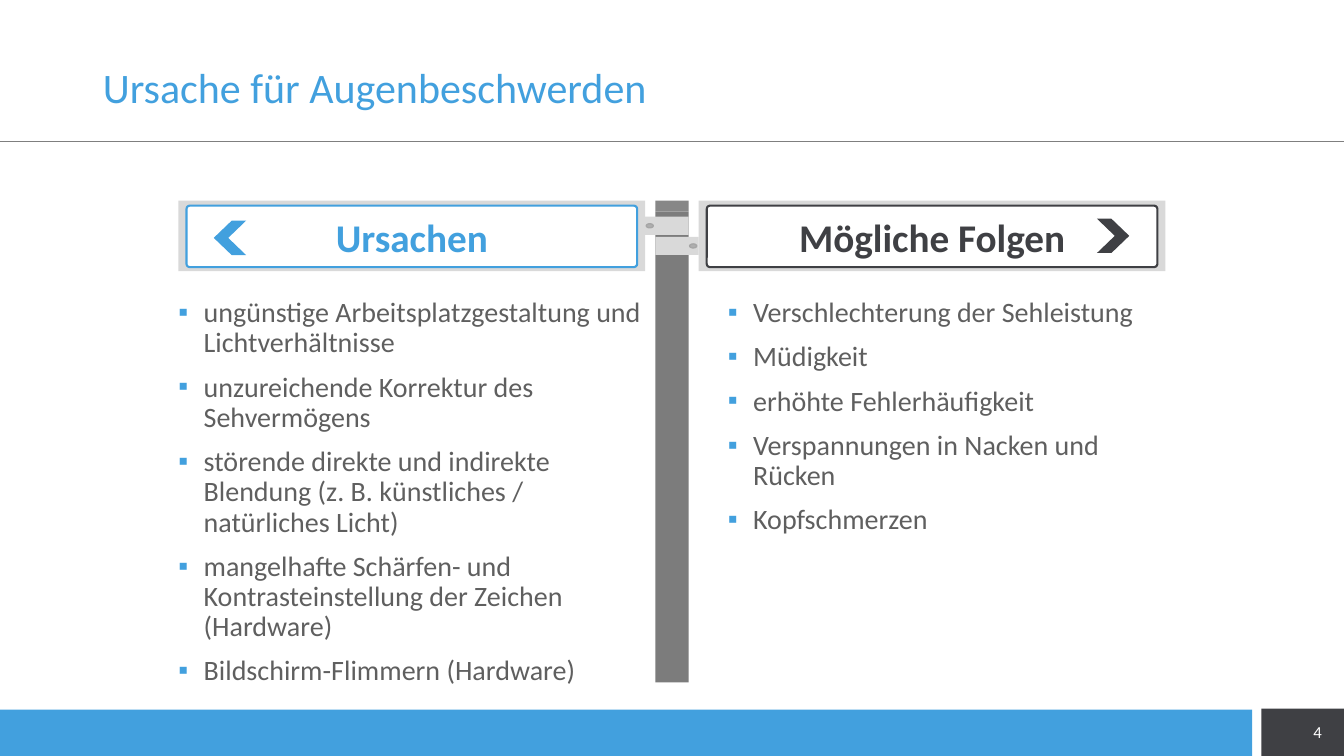
from dataclasses import dataclass

from lxml import etree
from pptx import Presentation
from pptx.dml.color import RGBColor
from pptx.enum.shapes import MSO_CONNECTOR, MSO_SHAPE
from pptx.enum.text import MSO_ANCHOR, MSO_AUTO_SIZE, PP_ALIGN
from pptx.oxml.ns import qn
from pptx.util import Inches, Pt

RECT, ROUNDED = MSO_SHAPE.RECTANGLE, MSO_SHAPE.ROUNDED_RECTANGLE
OVAL, CHEVRON = MSO_SHAPE.OVAL, MSO_SHAPE.CHEVRON
STRAIGHT = MSO_CONNECTOR.STRAIGHT
MIDDLE, TOP = MSO_ANCHOR.MIDDLE, MSO_ANCHOR.TOP
LEFT, CENTER, RIGHT = PP_ALIGN.LEFT, PP_ALIGN.CENTER, PP_ALIGN.RIGHT
NO_AUTOFIT = MSO_AUTO_SIZE.NONE


@dataclass(frozen=True)
class Theme:
    font: str = "Calibri"
    blue: str = "42A0DE"
    dark: str = "3F4044"
    text: str = "5F5F5F"
    white: str = "FFFFFF"
    rule: str = "7F7F7F"
    post: str = "7C7C7C"
    post_cap: str = "878787"
    panel: str = "D9D9D9"
    rivet: str = "AFAFAF"
    rivet_edge: str = "A6A6A6"
    title_size: int = 30
    sign_size: int = 28
    list_size: int = 20
    number_size: int = 12


@dataclass(frozen=True)
class Box:
    left: float
    top: float
    width: float
    height: float

    def lengths(self) -> tuple:
        return tuple(Inches(v) for v in (self.left, self.top, self.width, self.height))


@dataclass(frozen=True)
class Sign:
    heading: str
    color: str
    panel_left: float
    arrow_left: float
    arrow_turn: int
    bracket_left: float
    bracket_top: float
    list_box: Box
    points: tuple


THEME = Theme()
SIGNS = (
    Sign("Ursachen", THEME.blue, 1.77, 2.12, 180, 6.4, 2.15, Box(1.77, 2.91, 4.62, 3.63), (
        "ungünstige Arbeitsplatzgestaltung und Lichtverhältnisse",
        "unzureichende Korrektur des Sehvermögens",
        "störende direkte und indirekte Blendung (z. B. künstliches / natürliches Licht)",
        "mangelhafte Schärfen- und Kontrasteinstellung der Zeichen (Hardware)",
        "Bildschirm-Flimmern (Hardware)",
    )),
    Sign("Mögliche Folgen", THEME.dark, 6.93, 10.88, 0, 6.5, 2.35, Box(7.22, 2.91, 4.55, 3.61), (
        "Verschlechterung der Sehleistung",
        "Müdigkeit",
        "erhöhte Fehlerhäufigkeit",
        "Verspannungen in Nacken und Rücken",
        "Kopfschmerzen",
    )),
)


def place(target, box: Box) -> None:
    target.left, target.top, target.width, target.height = box.lengths()


def add_block(slide, kind, box: Box, fill: str, edge: str = "", edge_width: float = 0):
    block = slide.shapes.add_shape(kind, *box.lengths())
    block.shadow.inherit = False
    block.fill.solid()
    block.fill.fore_color.rgb = RGBColor.from_string(fill)
    if edge:
        block.line.color.rgb = RGBColor.from_string(edge)
        block.line.width = Pt(edge_width)
    else:
        block.line.fill.background()
    return block


def set_frame(frame, anchor, side_inset: float) -> None:
    frame.word_wrap = True
    frame.auto_size = NO_AUTOFIT
    frame.vertical_anchor = anchor
    frame.margin_left = frame.margin_right = Inches(side_inset)
    frame.margin_top = frame.margin_bottom = Inches(0.05)


def add_text(paragraph, text: str, size: int, color: str, align, bold: bool = False) -> None:
    paragraph.alignment = align
    run = paragraph.add_run()
    run.text = text
    run.font.name = THEME.font
    run.font.size = Pt(size)
    run.font.bold = bold
    run.font.color.rgb = RGBColor.from_string(color)


def add_bullet(paragraph) -> None:
    paragraph.line_spacing = 0.9
    paragraph.space_before = Pt(10)
    properties = paragraph._p.get_or_add_pPr()
    properties.set("marL", str(Inches(0.25)))
    properties.set("indent", str(-Inches(0.25)))
    bullet_color = etree.SubElement(properties, qn("a:buClr"))
    etree.SubElement(bullet_color, qn("a:srgbClr"), val=THEME.blue)
    etree.SubElement(properties, qn("a:buChar"), char="▪")


def draw_base(slide) -> None:
    add_block(slide, RECT, Box(12.51, 7.03, 0.82, 0.47), THEME.dark)
    add_block(slide, RECT, Box(0, 7.04, 12.42, 0.46), THEME.blue)
    rule = slide.shapes.add_connector(STRAIGHT, 0, Inches(1.4), Inches(13.33), Inches(1.4))
    rule.line.color.rgb = RGBColor.from_string(THEME.rule)
    rule.line.width = Pt(0.5)
    etree.SubElement(rule._element.spPr, qn("a:effectLst"))
    page_number = slide.shapes.add_textbox(*Box(12.64, 7.06, 0.57, 0.4).lengths())
    set_frame(page_number.text_frame, MIDDLE, 0.1)
    add_text(page_number.text_frame.paragraphs[0], "4", THEME.number_size, THEME.white, RIGHT)


def fill_title(title) -> None:
    place(title, Box(0.92, 0.4, 11.5, 0.98))
    set_frame(title.text_frame, MIDDLE, 0.1)
    heading = title.text_frame.paragraphs[0]
    heading.line_spacing = 0.9
    add_text(heading, "Ursache für Augenbeschwerden", THEME.title_size, THEME.blue, LEFT)


def draw_post(slide) -> None:
    add_block(slide, RECT, Box(6.5, 2.1, 0.33, 4.67), THEME.post)
    add_block(slide, RECT, Box(6.5, 1.99, 0.33, 0.11), THEME.post_cap)


def draw_sign(slide, sign: Sign) -> None:
    add_block(slide, RECT, Box(sign.panel_left, 1.99, 4.63, 0.7), THEME.panel)
    board_box = Box(sign.panel_left + 0.08, 2.04, 4.47, 0.61)
    board = add_block(slide, ROUNDED, board_box, THEME.white, sign.color, 1.5)
    board.adjustments[0] = 0.054
    set_frame(board.text_frame, MIDDLE, 0.16)
    add_text(board.text_frame.paragraphs[0], sign.heading, THEME.sign_size, sign.color, CENTER, True)

    add_block(slide, RECT, Box(sign.bracket_left, sign.bracket_top, 0.43, 0.18), THEME.panel)
    rivet_left = 6.41 if sign.arrow_turn else 6.84
    rivet_box = Box(rivet_left, sign.bracket_top + 0.07, 0.07, 0.04)
    add_block(slide, OVAL, rivet_box, THEME.rivet, THEME.rivet_edge, 1)

    arrow_top = 2.19 if sign.arrow_turn else 2.17
    arrow = add_block(slide, CHEVRON, Box(sign.arrow_left, arrow_top, 0.32, 0.34), sign.color)
    arrow.adjustments[0] = 0.553
    arrow.rotation = sign.arrow_turn


def fill_list(body, sign: Sign) -> None:
    place(body, sign.list_box)
    frame = body.text_frame
    set_frame(frame, TOP, 0)
    for index, point in enumerate(sign.points):
        paragraph = frame.add_paragraph() if index else frame.paragraphs[0]
        add_bullet(paragraph)
        add_text(paragraph, point, THEME.list_size, THEME.text, LEFT)


def main() -> None:
    deck = Presentation()
    deck.slide_width, deck.slide_height = Inches(13.33), Inches(7.5)
    slide = deck.slides.add_slide(deck.slide_layouts.get_by_name("Two Content"))
    draw_base(slide)
    fill_title(slide.shapes.title)
    draw_post(slide)
    for placeholder_index, sign in enumerate(SIGNS, start=1):
        draw_sign(slide, sign)
        fill_list(slide.placeholders[placeholder_index], sign)
    deck.save("out.pptx")


if __name__ == "__main__":
    main()
